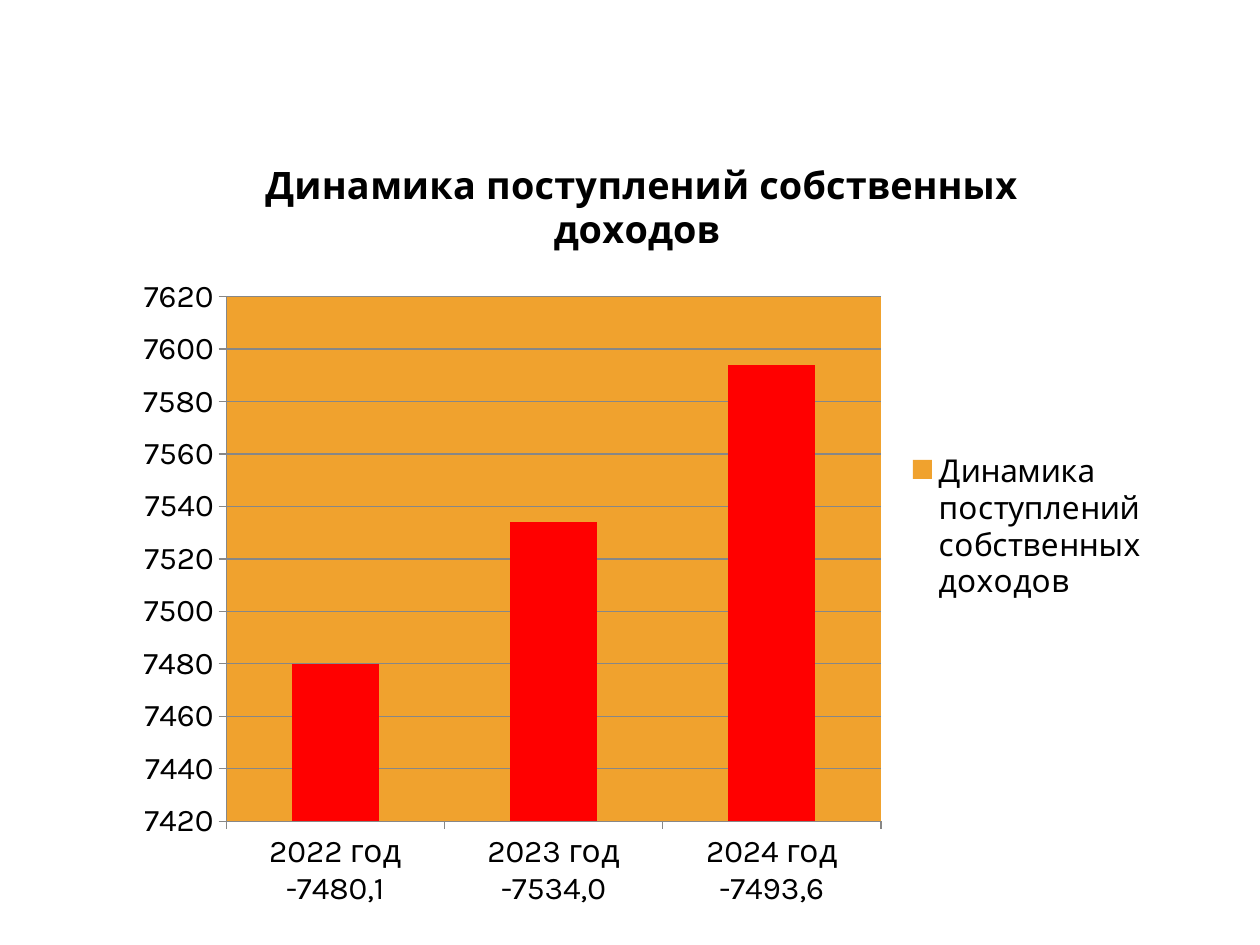
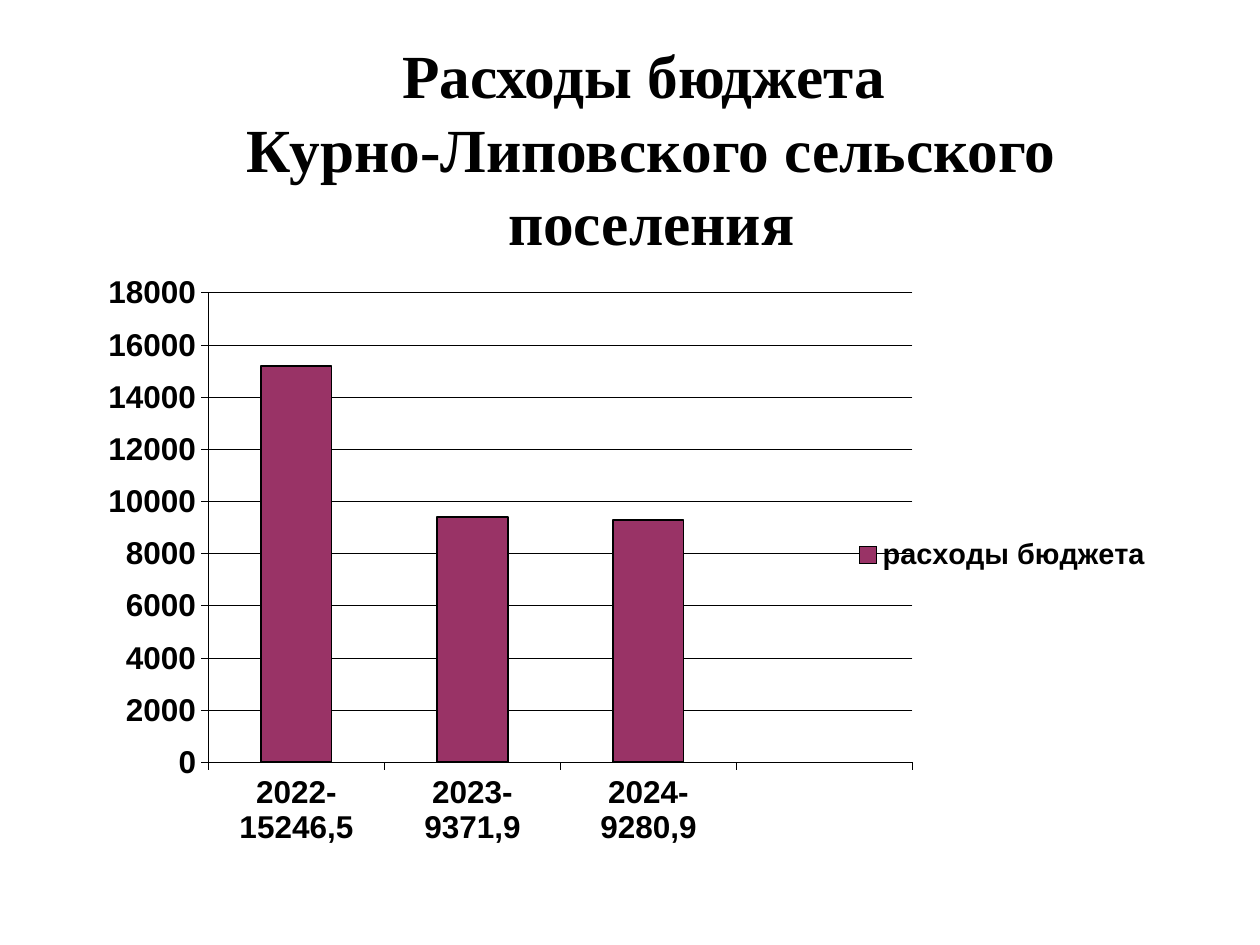
from pptx import Presentation
from pptx.chart.data import CategoryChartData
from pptx.dml.color import RGBColor
from pptx.enum.chart import XL_CHART_TYPE, XL_LEGEND_POSITION, XL_TICK_LABEL_POSITION
from pptx.enum.text import MSO_ANCHOR, PP_ALIGN
from pptx.oxml import parse_xml
from pptx.oxml.ns import qn
from pptx.util import Inches, Pt

BLACK = RGBColor(0x00, 0x00, 0x00)
ORANGE = RGBColor(0xF0, 0xA2, 0x2E)
RED = RGBColor(0xFF, 0x00, 0x00)
PLUM = RGBColor(0x99, 0x33, 0x66)
GRAY = RGBColor(0x87, 0x87, 0x87)
NS = 'xmlns:c="http://schemas.openxmlformats.org/drawingml/2006/chart" ' \
     'xmlns:a="http://schemas.openxmlformats.org/drawingml/2006/main"'


def style(font, size, face, bold=False, color=BLACK):
    font.size, font.name, font.bold = Pt(size), face, bold
    font.color.rgb = color


def put_text(frame, text, size=18, face="Arial", bold=False):
    """Write one centred paragraph for each line of the text."""
    for num, line in enumerate(text.split("\n")):
        para = frame.add_paragraph() if num else frame.paragraphs[0]
        para.alignment = PP_ALIGN.CENTER
        run = para.add_run()
        run.text = line
        style(run.font, size, face, bold)


def add_title(slide, text, box, **look):
    frame = slide.shapes.add_textbox(*map(Inches, box)).text_frame
    frame.word_wrap = True
    frame.vertical_anchor = MSO_ANCHOR.TOP
    frame.margin_left = frame.margin_right = Inches(0.2)
    put_text(frame, text, **look)


def layout(box, inner=False):
    """Manual layout as shares of the chart's size."""
    target = '<c:layoutTarget val="inner"/>' if inner else ""
    modes = "".join(f'<c:{k}Mode val="edge"/>' for k in "xy")
    sizes = "".join(f'<c:{k} val="{v}"/>' for k, v in zip("xywh", box))
    return parse_xml(f"<c:layout {NS}><c:manualLayout>{target}{modes}{sizes}"
                     "</c:manualLayout></c:layout>")


def set_plot(chart, box, fill=None):
    area = chart._chartSpace.chart.plotArea
    for old in area.findall(qn("c:layout")):
        area.remove(old)
    area.insert(0, layout(box, inner=True))
    if fill is not None:
        area.append(parse_xml(f'<c:spPr {NS}><a:solidFill><a:srgbClr val="{fill}"/>'
                              "</a:solidFill></c:spPr>"))


def set_line(line, color, width):
    line.color.rgb = color
    line.width = Pt(width)


def set_axes(chart, low, high, step, color, width):
    val, cat = chart.value_axis, chart.category_axis
    val.minimum_scale, val.maximum_scale, val.major_unit = low, high, step
    val.has_major_gridlines = True
    cat.tick_label_position = XL_TICK_LABEL_POSITION.LOW
    for item in (val, cat, val.major_gridlines):
        set_line(item.format.line, color, width)


def set_legend(chart, size, face, bold, box=None):
    chart.has_legend = True
    legend = chart.legend
    legend.position = XL_LEGEND_POSITION.RIGHT
    legend.include_in_layout = False
    style(legend.font, size, face, bold)
    if box:
        legend._element.find(qn("c:legendPos")).addnext(layout(box))


def add_bars(slide, box, name, cats, vals, color, kind=XL_CHART_TYPE.COLUMN_CLUSTERED,
             face="Arial", bold=False):
    data = CategoryChartData()
    data.categories = cats
    data.add_series(name, vals)
    chart = slide.shapes.add_chart(kind, *map(Inches, box), data).chart
    style(chart.font, 18, face, bold)
    chart.has_title = False
    plot = chart.plots[0]
    plot.gap_width, plot.vary_by_categories = 150, False
    bars = plot.series[0]
    bars.format.fill.solid()
    bars.format.fill.fore_color.rgb = color
    return chart, bars


def add_income(slide):
    name = "Динамика поступлений собственных доходов "
    cats = ["2022 год -7480,1", "2023 год -7534,0", "2024 год -7493,6"]
    chart, bars = add_bars(slide, (0.97, 1.03, 8.25, 6.31), name, cats,
                           (7480, 7534, 7594), ORANGE,
                           XL_CHART_TYPE.COLUMN_STACKED, "Karla")
    for num in range(len(cats)):
        fill = bars.points[num].format.fill
        fill.solid()
        fill.fore_color.rgb = RED
    put_text(chart.chart_title.text_frame, name, size=21.6, face="Karla", bold=True)
    chart.chart_title.include_in_layout = False
    set_axes(chart, 7420, 7620, 20, GRAY, 0.75)
    set_legend(chart, 18, "Karla", False)
    set_plot(chart, (0.1, 0.21, 0.63, 0.66), ORANGE)


def add_costs(slide):
    add_title(slide, "Расходы бюджета \nКурно-Липовского сельского поселения",
              (0.67, 0.25, 9, 1.25), size=35, face="Times New Roman", bold=True)
    cats = ["2022-15246,5", "2023-9371,9", "2024-9280,9", ""]
    chart, bars = add_bars(slide, (0.59, 2.13, 8.87, 4.84), "расходы бюджета", cats,
                           (15200, 9400, 9300, None), PLUM, bold=True)
    set_line(bars.format.line, BLACK, 1)
    set_axes(chart, 0, 18000, 2000, BLACK, 0.25)
    set_legend(chart, 16.5, "Arial", True, (0.69, 0.43, 0.28, 0.08))
    set_plot(chart, (0.12, 0.04, 0.63, 0.77))


def main():
    deck = Presentation()
    deck.slide_width, deck.slide_height = Inches(10), Inches(7.5)
    for build in (add_income, add_costs):
        build(deck.slides.add_slide(deck.slide_layouts[6]))
    deck.save("out.pptx")


if __name__ == "__main__":
    main()
